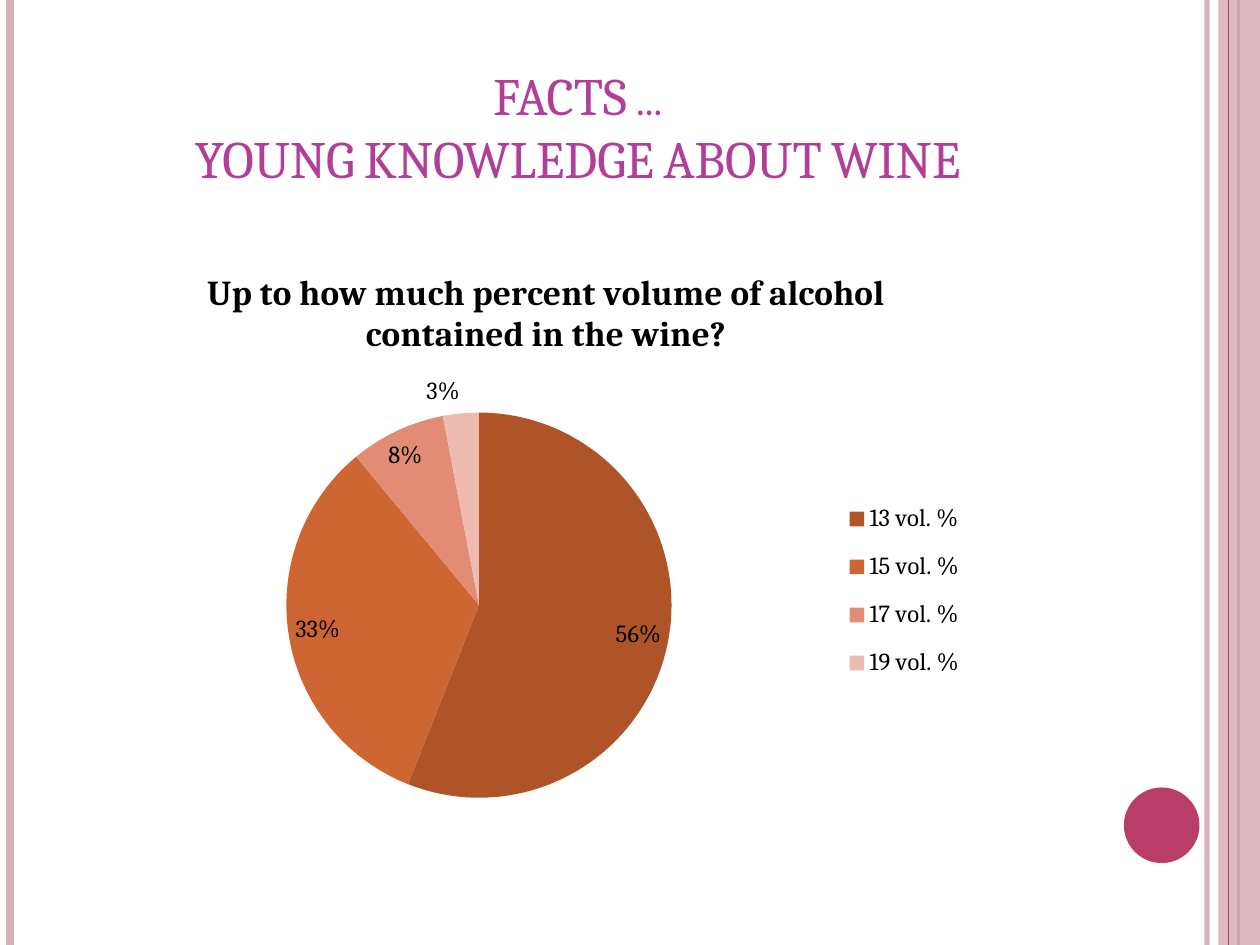
import pptx
import pptx.chart.data
import pptx.dml.color
import pptx.enum.chart
import pptx.enum.shapes
import pptx.enum.text
import pptx.oxml
import pptx.oxml.ns
import pptx.util

Inches = pptx.util.Inches
Pt = pptx.util.Pt
RGB = pptx.dml.color.RGBColor

FONT = "Cambria"
BLACK = RGB(0, 0, 0)
PURPLE = RGB(0xB1, 0x3F, 0x9A)
ROSE = RGB(0xB8, 0x3D, 0x68)
PINK = RGB(0xD8, 0xAF, 0xB9)
SLICES = [RGB(0xAE, 0x54, 0x28), RGB(0xCE, 0x66, 0x33),
          RGB(0xE3, 0x8C, 0x75), RGB(0xED, 0xBB, 0xB0)]


class Deck:
    def __init__(self):
        self.file = pptx.Presentation()
        self.file.slide_width = Inches(10)
        self.file.slide_height = Inches(7.5)
        self.slide = self.file.slides.add_slide(self.file.slide_layouts[5])

    def style(self, font, **values):
        for name, value in ({"name": FONT} | values).items():
            if name == "color":
                font.color.rgb = value
            else:
                setattr(font, name, value)

    def fade(self, fill, alpha):
        """Set the opacity, in percent, of a solid fill."""
        color = fill._xPr.find(".//" + pptx.oxml.ns.qn("a:srgbClr"))
        node = pptx.oxml.parse_xml(
            f'<a:alpha {pptx.oxml.ns.nsdecls("a")} val="{alpha * 1000}"/>')
        color.append(node)

    def rule(self, x, color, width, alpha=100):
        line = self.slide.shapes.add_connector(
            pptx.enum.shapes.MSO_CONNECTOR.STRAIGHT,
            Inches(x), 0, Inches(x), self.file.slide_height)
        line.line.color.rgb = color
        line.line.width = Pt(width)
        if alpha < 100:
            self.fade(line.line.fill, alpha)
        line._element.spPr.append(pptx.oxml.parse_xml(
            f'<a:effectLst {pptx.oxml.ns.nsdecls("a")}/>'))

    def shape(self, kind, box, color, alpha=100):
        shape = self.slide.shapes.add_shape(kind, *map(Inches, box))
        shape.shadow.inherit = False
        shape.fill.solid()
        shape.fill.fore_color.rgb = color
        shape.line.fill.background()
        if alpha < 100:
            self.fade(shape.fill, alpha)

    def title(self, text, box):
        title = self.slide.shapes.title
        title.left, title.top, title.width, title.height = map(Inches, box)
        frame = title.text_frame
        frame.text = text
        frame.auto_size = pptx.enum.text.MSO_AUTO_SIZE.NONE
        frame.vertical_anchor = pptx.enum.text.MSO_ANCHOR.BOTTOM
        para = frame.paragraphs[0]
        para.alignment = pptx.enum.text.PP_ALIGN.CENTER
        for run in para.runs:
            self.style(run.font, size=Pt(30), color=PURPLE)
            run._r.get_or_add_rPr().set("cap", "small")

    def place(self, parent, **values):
        """Give a chart part a fixed place, as fractions of the chart."""
        old = parent.find(pptx.oxml.ns.qn("c:layout"))
        if old is not None:
            parent.remove(old)
        modes = '<c:xMode val="edge"/><c:yMode val="edge"/>'
        sizes = "".join(f'<c:{k} val="{v}"/>' for k, v in values.items())
        inner = ('<c:layoutTarget val="inner"/>'
                 if parent.tag.endswith("plotArea") else "")
        node = pptx.oxml.parse_xml(
            f'<c:layout {pptx.oxml.ns.nsdecls("c")}><c:manualLayout>'
            f'{inner}{modes}{sizes}</c:manualLayout></c:layout>')
        first = parent.find(pptx.oxml.ns.qn("c:legendPos"))
        parent.insert(0 if first is None else 1, node)

    def pie(self, box, text, cats, vals):
        data = pptx.chart.data.CategoryChartData()
        data.categories = cats
        data.add_series("Series 1", vals)
        chart = self.slide.shapes.add_chart(
            pptx.enum.chart.XL_CHART_TYPE.PIE, *map(Inches, box), data).chart
        self.style(chart.font, size=Pt(10), color=BLACK)

        # Chart title
        chart.has_title = True
        chart.chart_title.include_in_layout = False
        frame = chart.chart_title.text_frame
        frame.text = text
        self.style(frame.paragraphs[0].runs[0].font,
                   size=Pt(20), bold=True, color=BLACK)

        # Legend
        chart.has_legend = True
        legend = chart.legend
        legend.position = pptx.enum.chart.XL_LEGEND_POSITION.RIGHT
        legend.include_in_layout = False
        self.style(legend.font, size=Pt(14), color=BLACK)
        self.place(legend._element, x=0.82, y=0.42, w=0.16, h=0.37)

        # Slices and their labels
        plot = chart.plots[0]
        plot.vary_by_categories = True
        self.place(chart._chartSpace.chart.plotArea,
                   x=0.21, y=0.29, w=0.43, h=0.68)
        for i, color in enumerate(SLICES):
            fill = plot.series[0].points[i].format.fill
            fill.solid()
            fill.fore_color.rgb = color
        plot.has_data_labels = True
        labels = plot.data_labels
        labels.show_percentage = True
        labels.show_value = False
        labels.number_format = "0%"
        labels.number_format_is_linked = False
        labels.position = pptx.enum.chart.XL_LABEL_POSITION.BEST_FIT
        self.style(labels.font, size=Pt(14), color=BLACK)


def main():
    deck = Deck()
    kinds = pptx.enum.shapes.MSO_SHAPE

    # Side stripes and dot
    deck.rule(9.58, PINK, 3, 93)
    deck.rule(0.08, PINK, 4.5)
    deck.rule(9.83, ROSE, 1.5)
    deck.shape(kinds.RECTANGLE, (9.67, 0, 0.33, 7.5), PINK, 87)
    deck.rule(9.75, ROSE, 0.75)
    deck.shape(kinds.OVAL, (8.92, 6.25, 0.6, 0.6), ROSE)

    # Title and chart
    deck.title("FACTS ...\vYOUNG KNOWLEDGE ABOUT WINE",
               (0.5, 0.3, 8.17, 1.25))
    deck.pie((0.78, 1.95, 7.11, 4.53),
             "Up to how much percent volume of alcohol contained in the wine?",
             [f"{n} vol. %" for n in (13, 15, 17, 19)], (56, 33, 8, 3))
    deck.file.save("out.pptx")


if __name__ == "__main__":
    main()
